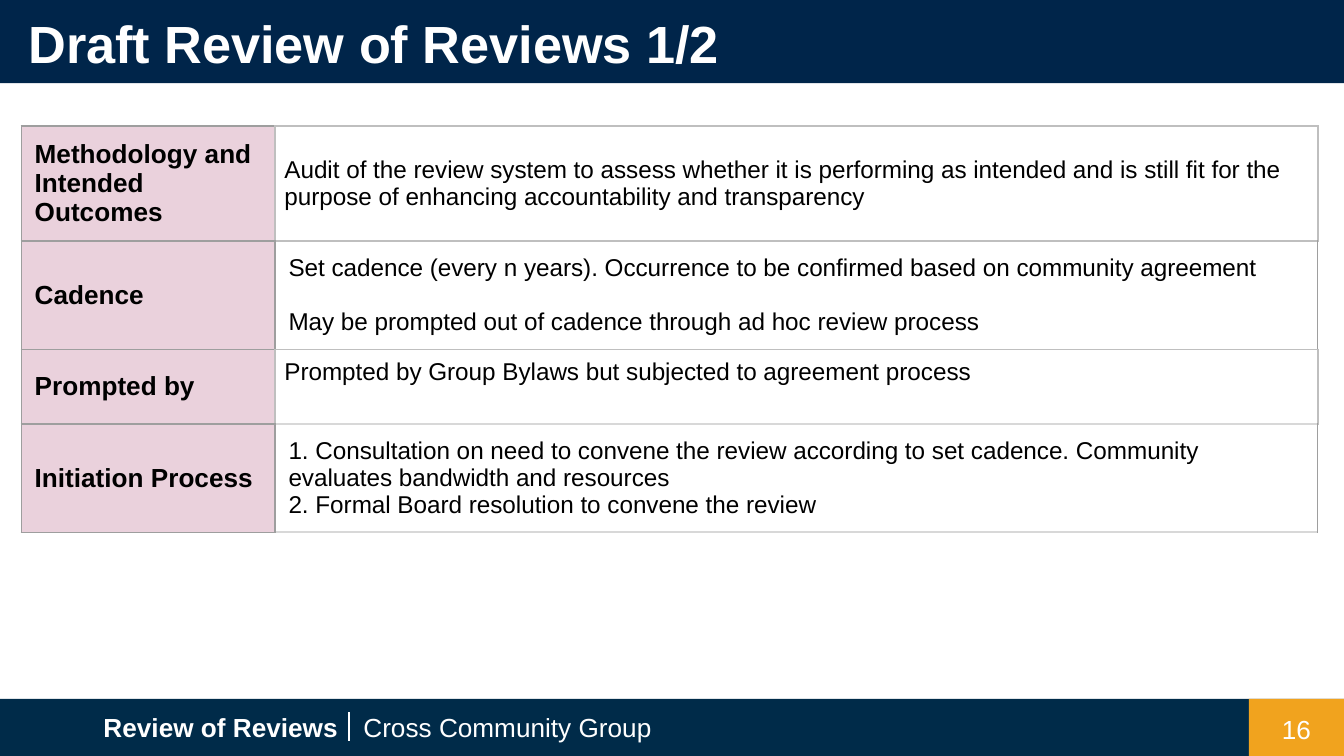
from dataclasses import dataclass
from lxml.etree import SubElement
from pptx import Presentation
from pptx.dml.color import RGBColor as RGB
from pptx.enum.shapes import MSO_CONNECTOR as Connector, MSO_SHAPE as Shape
from pptx.enum.text import MSO_ANCHOR as Anchor, MSO_AUTO_SIZE as AutoSize, PP_ALIGN as Align
from pptx.oxml import parse_xml
from pptx.oxml.ns import nsdecls, qn
from pptx.util import Pt


@dataclass(frozen=True)
class Theme:
    font: str = "Arial"
    header: str = "00254A"
    footer: str = "002B49"
    accent: str = "F1A31E"
    label: str = "EAD1DC"
    white: str = "FFFFFF"
    black: str = "000000"
    dark_rule: str = "9E9E9E"
    rule: str = "BFBFBF"
    pale_rule: str = "D8D8D8"
    title_size: int = 28
    label_size: int = 14
    detail_size: int = 13


theme = Theme()


def write(holder, lines, size, color, bold=False, align=Align.LEFT, gap=0):
    frame = holder.text_frame
    frame.text = "\n".join(lines)
    frame.word_wrap = True
    for index, paragraph in enumerate(frame.paragraphs):
        paragraph.alignment = align
        paragraph.space_before = Pt(gap if index else 0)
        for run in paragraph.runs:
            run.font.name = theme.font
            run.font.size = Pt(size)
            run.font.bold = bold
            run.font.color.rgb = RGB.from_string(color)


def format_cell(cell, inset, anchor, borders, fill=None):
    cell.margin_left = cell.margin_right = Pt(inset)
    cell.margin_top = cell.margin_bottom = Pt(inset)
    cell.vertical_anchor = anchor
    properties = cell._tc.get_or_add_tcPr()
    for side, (color, width) in zip("LRTB", borders):
        properties.append(parse_xml(
            f'<a:ln{side} {nsdecls("a")} w="{Pt(width)}"><a:solidFill>'
            f'<a:srgbClr val="{color}"/></a:solidFill></a:ln{side}>'))
    if fill:
        cell.fill.solid()
        cell.fill.fore_color.rgb = RGB.from_string(fill)
    else:
        cell.fill.background()


deck = Presentation()
deck.slide_width, deck.slide_height = Pt(720), Pt(405)
slide = deck.slides.add_slide(deck.slide_layouts[5])
shapes = slide.shapes

for left, top, width, height, color in [
    (0, 374.4, 720, 30.6, theme.footer),
    (669, 374.4, 51, 30.6, theme.accent),
    (0, 0, 720, 44.6, theme.header),
]:
    band = shapes.add_shape(Shape.RECTANGLE, Pt(left), Pt(top), Pt(width), Pt(height))
    band.shadow.inherit = False
    band.fill.solid()
    band.fill.fore_color.rgb = RGB.from_string(color)
    band.line.fill.background()

for wording, left, top, width, bold, align in [
    ("Review of Reviews", 48.4, 373.8, 144, True, Align.LEFT),
    ("Cross Community Group", 187.6, 373.8, 181, False, Align.LEFT),
    ("16", 669, 375, 51, False, Align.CENTER),
]:
    caption = shapes.add_textbox(Pt(left), Pt(top), Pt(width), Pt(31.6))
    write(caption, [wording], theme.label_size, theme.white, bold, align)
    frame = caption.text_frame
    frame.vertical_anchor = Anchor.MIDDLE
    frame.margin_left = frame.margin_right = Pt(7.2)
    frame.margin_top = frame.margin_bottom = Pt(7.2)

divider = shapes.add_connector(Connector.STRAIGHT, Pt(187), Pt(381.6), Pt(187), Pt(396.8))
divider.line.color.rgb = RGB.from_string(theme.white)
divider.line.width = Pt(1.5)
SubElement(divider._element.spPr, qn("a:effectLst"))

title = shapes.title
title.left, title.top, title.width, title.height = Pt(8), Pt(0), Pt(708), Pt(43.2)
write(title, ["Draft Review of Reviews 1/2"], theme.title_size, theme.white, True)
title.text_frame.auto_size = AutoSize.NONE
title.text_frame.vertical_anchor = Anchor.BOTTOM
title.element.getparent().append(title.element)

dark, light = (theme.dark_rule, 0.75), (theme.rule, 1)
thin, pale = (theme.rule, 0.75), (theme.pale_rule, 1)
topics = [
    ("Methodology and Intended Outcomes",
     ["Audit of the review system to assess whether it is performing as intended and is still "
      "fit for the purpose of enhancing accountability and transparency"],
     61.4, 5, Anchor.MIDDLE, 0, (light, light, light, light)),
    ("Cadence",
     ["Set cadence (every n years). Occurrence to be confirmed based on community agreement",
      "May be prompted out of cadence through ad hoc review process"],
     58, 7.2, Anchor.MIDDLE, 14.5, (dark, dark, light, thin)),
    ("Prompted by",
     ["Prompted by Group Bylaws but subjected to agreement process"],
     40, 5, Anchor.TOP, 0, (light, light, thin, pale)),
    ("Initiation Process",
     ["1. Consultation on need to convene the review according to set cadence. Community "
      "evaluates bandwidth and resources",
      "2. Formal Board resolution to convene the review"],
     58, 7.2, Anchor.MIDDLE, 0, (dark, dark, pale, pale)),
]
column_widths = (136, 558.6)
total_height = sum(topic[2] for topic in topics)
review = shapes.add_table(len(topics), 2, Pt(11.4), Pt(67.5),
                          Pt(sum(column_widths)), Pt(total_height)).table
review.first_row = review.horz_banding = False
for column, width in zip(review.columns, column_widths):
    column.width = Pt(width)

for row, (label, details, height, inset, anchor, gap, borders) in enumerate(topics):
    review.rows[row].height = Pt(height)
    label_cell, detail_cell = review.cell(row, 0), review.cell(row, 1)
    write(label_cell, [label], theme.label_size, theme.black, True)
    format_cell(label_cell, 7.2, Anchor.MIDDLE, [dark] * 4, theme.label)
    write(detail_cell, details, theme.detail_size, theme.black, gap=gap)
    format_cell(detail_cell, inset, anchor, borders)

deck.save("out.pptx")
